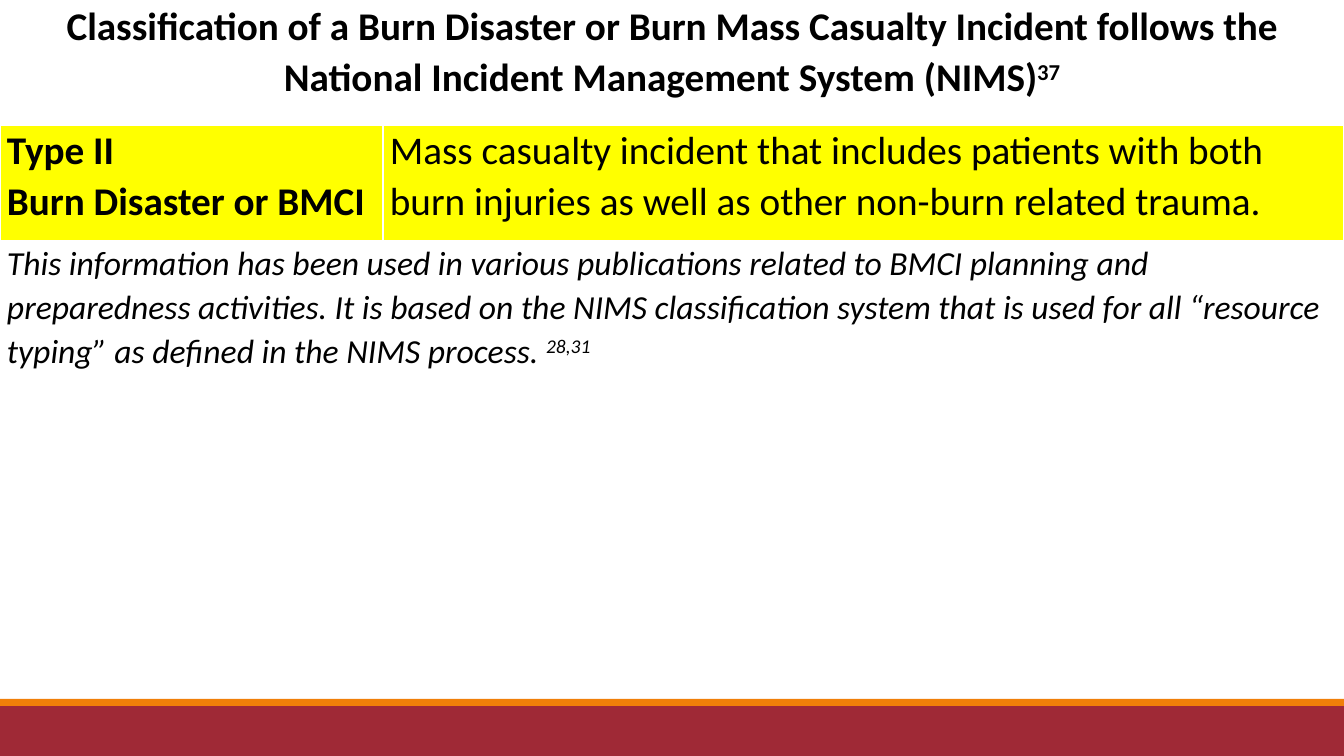
from lxml import etree
from pptx import Presentation
from pptx.dml.color import RGBColor
from pptx.enum.shapes import MSO_SHAPE
from pptx.enum.text import PP_ALIGN
from pptx.oxml.ns import qn
from pptx.util import Pt

RECT = MSO_SHAPE.RECTANGLE
LEFT, CENTER = PP_ALIGN.LEFT, PP_ALIGN.CENTER

# Content
TITLE = ("Classification of a Burn Disaster or Burn Mass Casualty Incident follows the "
         "National Incident Management System (NIMS)")
DEFINITION = ("Mass casualty incident that includes patients with both burn injuries "
              "as well as other non-burn related trauma.")
NOTE = ("This information has been used in various publications related to BMCI planning "
        "and preparedness activities. It is based on the NIMS classification system that is "
        "used for all “resource typing” as defined in the NIMS process. ")
BOLD = {"size": Pt(28), "bold": True}
PLAIN = {"size": Pt(28), "bold": False}
ITALIC = {"size": Pt(24), "bold": False, "italic": True}

# row, column, paragraphs, superscript, format, alignment, fill
CELLS = [
    (0, 0, [TITLE], "37", BOLD, CENTER, "FFFFFF"),
    (1, 0, ["Type II", "Burn Disaster or BMCI"], "", BOLD, LEFT, "FFFF00"),
    (1, 1, [DEFINITION], "", PLAIN, LEFT, "FFFF00"),
    (2, 0, [NOTE], "28,31", ITALIC, LEFT, "FFFFFF"),
]
FULL_WIDTH_ROWS = (0, 2)

# Layout in px
W, H = 1344, 756
COLS = (383, 961)
ROWS = (124, 117, 169)
BARS = [(706, 50, "9F2936"), (699, 7, "F07F09")]  # top, height, colour
INSET = 7


def px(n):
    return round(n * 914400 / 100.8)


def rgb(value):
    return RGBColor.from_string(value)


def set_borders(cell, bottom):
    tc_pr = cell._tc.get_or_add_tcPr()
    widths = {"lnL": 1, "lnR": 1, "lnT": 1, "lnB": bottom}
    for i, (tag, width) in enumerate(widths.items()):
        ln = etree.Element(qn("a:" + tag), w=str(Pt(width)))
        fill = etree.SubElement(ln, qn("a:solidFill"))
        etree.SubElement(fill, qn("a:srgbClr"), val="FFFFFF")
        tc_pr.insert(i, ln)


def add_run(p, text, fmt):
    r = p.add_run()
    r.text = text
    for name, value in fmt.items():
        setattr(r.font, name, value)
    r.font.name = "Calibri"
    r.font.color.rgb = rgb("000000")
    return r


prs = Presentation()
prs.slide_width, prs.slide_height = px(W), px(H)
s = prs.slides.add_slide(prs.slide_layouts[6])

# Footer bars
for top, height, color in BARS:
    sp = s.shapes.add_shape(RECT, 0, px(top), px(W), px(height))
    sp.shadow.inherit = False
    sp.fill.solid()
    sp.fill.fore_color.rgb = rgb(color)
    sp.line.fill.background()

# Table grid
table = s.shapes.add_table(len(ROWS), len(COLS), 0, 0, px(W), px(sum(ROWS))).table
for col, width in zip(table.columns, COLS):
    col.width = px(width)
for row, height in zip(table.rows, ROWS):
    row.height = px(height)
for i in FULL_WIDTH_ROWS:
    table.cell(i, 0).merge(table.cell(i, len(COLS) - 1))

# Table text
for row, col, lines, superscript, fmt, align, color in CELLS:
    cell = table.cell(row, col)
    cell.margin_left = cell.margin_right = px(INSET)
    cell.margin_top = cell.margin_bottom = 0
    cell.fill.solid()
    cell.fill.fore_color.rgb = rgb(color)
    set_borders(cell, 3 if row == 0 else 1)
    tf = cell.text_frame
    for i, line in enumerate(lines):
        p = tf.add_paragraph() if i else tf.paragraphs[0]
        p.alignment, p.line_spacing = align, 1.07
        add_run(p, line, fmt)
    if superscript:
        r = add_run(p, superscript, fmt)
        r.font._element.set("baseline", "30000")

prs.save("out.pptx")
